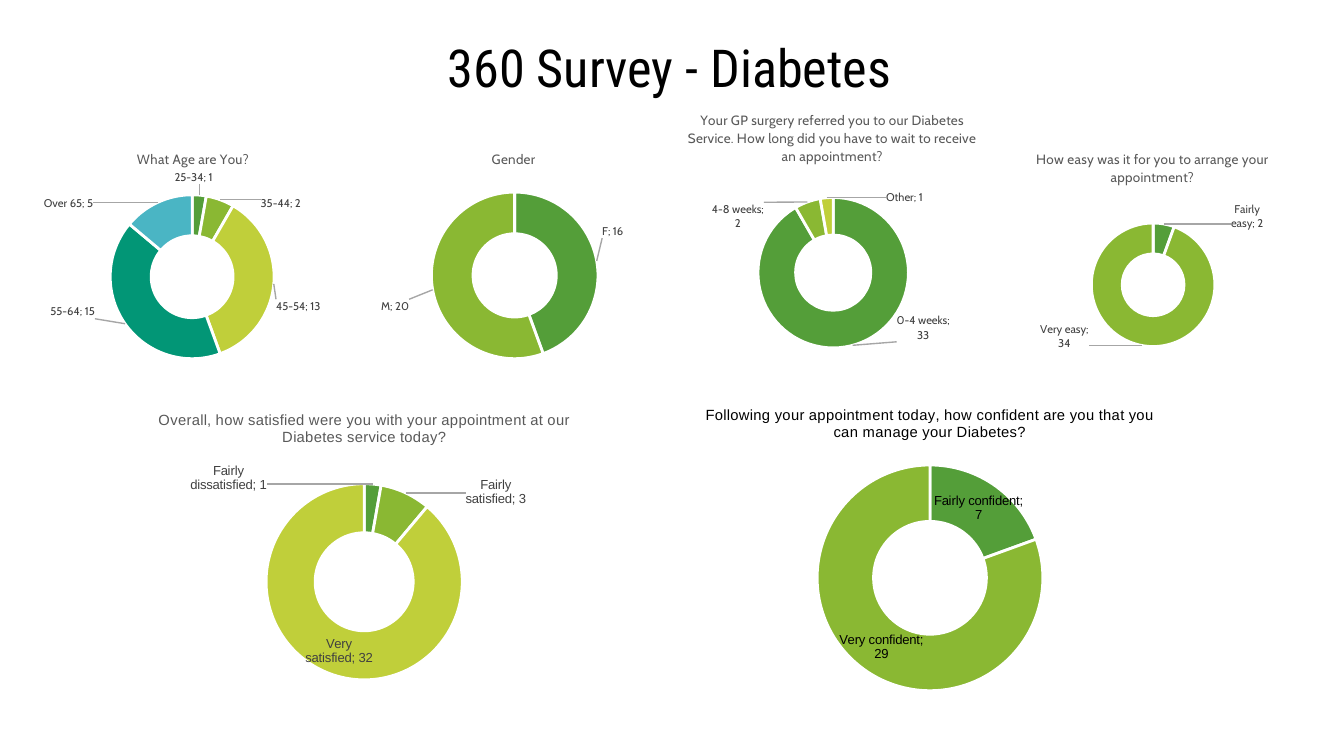
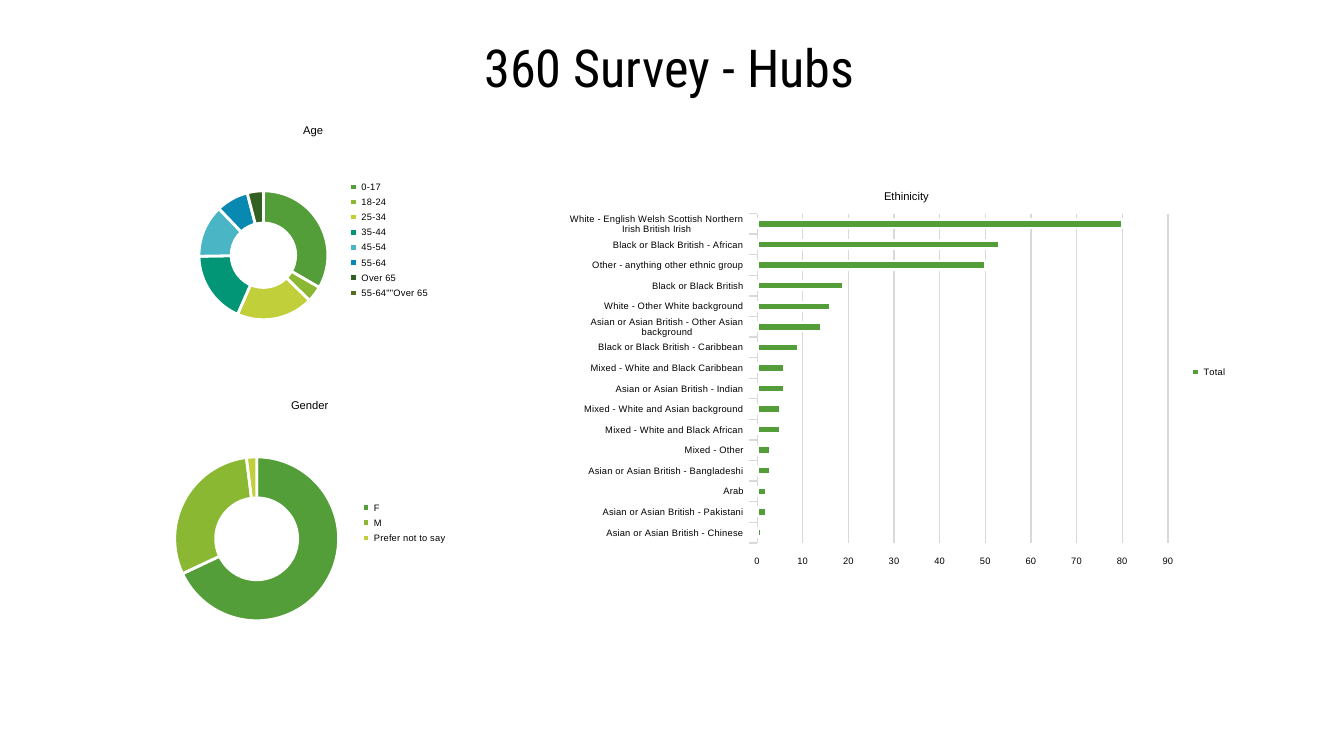
"""Builds two survey result slides with doughnut and bar charts."""
import math

import lxml.etree
import pptx
import pptx.chart.data
import pptx.dml.color
import pptx.enum.chart
import pptx.enum.text
import pptx.oxml
import pptx.oxml.ns
import pptx.util
from pptx.util import Inches, Pt

COLORS = {"black": "000000", "label": "404040", "heading": "595959",
          "grid": "D9D9D9", "leader": "A6A6A6", "white": "FFFFFF", "bar": "549E39"}
SEGMENTS = ["549E39", "8AB833", "C0CF3A", "029676", "4AB5C4", "0989B1", "325F22", "536E1F"]

CABIN = dict(font="Cabin", size=6, heading_size=7.2, heading_color="heading",
             label_color="label", hole=50, legend=False)
ARIAL = CABIN | dict(font="Arial", size=7, heading_size=7.9)
HUBS = dict(font="Arial", size=5, heading_size=6, heading_color="black",
            label_color=None, hole=75, legend=True)

DIABETES = [
    dict(CABIN, heading="What Age are You?", box=(0.02, 1, 2.83, 1.81),
         heading_at=(1, 1.09), ring=(1.43, 2.06, 0.61),
         data={"25-34": 1, "35-44": 2, "45-54": 13, "55-64": 15, "Over 65": 5},
         labels_at=[(1.44, 1.32), (2.09, 1.51), (2.22, 2.28), (0.54, 2.32), (0.51, 1.51)]),
    dict(CABIN, heading="Gender", box=(2.4, 1, 2.83, 1.81),
         heading_at=(3.64, 1.09), ring=(3.83, 2.05, 0.62),
         data={"F": 16, "M": 20}, labels_at=[(4.56, 1.72), (2.94, 2.28)]),
    dict(CABIN, heading="Your GP surgery referred you to our Diabetes Service. "
                        "How long did you have to wait to receive an appointment?",
         box=(4.78, 0.71, 2.83, 2.11), heading_at=(5.1, 0.8), ring=(6.2, 2.03, 0.56),
         data={"0-4 weeks": 33, "4-8 weeks": 2, "Other": 1},
         labels_at=[(6.87, 2.44), (5.49, 1.61), (6.73, 1.47)]),
    dict(CABIN, heading="How easy was it for you to arrange your appointment?",
         box=(7.17, 1, 2.83, 1.81), heading_at=(7.69, 1.09), ring=(8.58, 2.12, 0.46),
         data={"Fairly easy": 2, "Very easy": 34}, labels_at=[(9.28, 1.61), (7.92, 2.5)]),
    dict(ARIAL, heading="Overall, how satisfied were you with your appointment "
                        "at our Diabetes service today?",
         box=(0.58, 2.93, 4.27, 2.32), heading_at=(1.16, 3.03), ring=(2.71, 4.33, 0.73),
         data={"Fairly dissatisfied": 1, "Fairly satisfied": 3, "Very satisfied": 32},
         labels_at=[(1.7, 3.56), (3.69, 3.66)]),
    dict(ARIAL, heading="Following your appointment today, how confident are you "
                        "that you can manage your Diabetes?",
         heading_color="black", label_color="black",
         box=(4.78, 2.89, 4.27, 2.4), heading_at=(5.23, 2.99), ring=(6.92, 4.3, 0.84),
         data={"Fairly confident": 7, "Very confident": 29}, labels_at=[]),
]
HUB_RINGS = [
    dict(HUBS, heading="Age", box=(1.34, 0.8, 1.97, 1.97),
         heading_at=(2.24, 0.9), ring=(1.96, 1.9, 0.48),
         data={"0-17": 33, "18-24": 4, "25-34": 19, "35-44": 18, "45-54": 13,
               "55-64": 8, "Over 65": 4, '55-64""Over 65': 0}),
    dict(HUBS, heading="Gender", box=(1.17, 2.85, 2.27, 2.08),
         heading_at=(2.15, 2.95), ring=(1.91, 4.01, 0.61),
         data={"F": 68, "M": 30, "Prefer not to say": 2}),
]
ETHNICITY = dict(
    HUBS, heading="Ethinicity", box=(4.24, 1.27, 5, 3), heading_at=(6.56, 1.39),
    plot=(5.63, 1.59, 3.06, 2.45), series="Total",
    data={"Asian or Asian British - Chinese": 1,
          "Asian or Asian British - Pakistani": 2,
          "Arab": 2,
          "Asian or Asian British - Bangladeshi": 3,
          "Mixed - Other": 3,
          "Mixed - White and Black African": 5,
          "Mixed - White and Asian background": 5,
          "Asian or Asian British - Indian": 6,
          "Mixed - White and Black Caribbean": 6,
          "Black or Black British - Caribbean": 9,
          "Asian or Asian British - Other Asian background": 14,
          "White - Other White background": 16,
          "Black or Black British": 19,
          "Other - anything other ethnic group": 50,
          "Black or Black British - African": 53,
          "White - English Welsh Scottish Northern Irish British Irish": 80})


def rgb(value):
    return pptx.dml.color.RGBColor.from_string(COLORS.get(value, value))


def style_font(font, name, size, color):
    font.name, font.size, font.bold = name, Pt(size), False
    font.color.rgb = rgb(color)


def write_text(frame, text, *, font, size, color="black"):
    frame.text = text
    paragraph = frame.paragraphs[0]
    paragraph.alignment = pptx.enum.text.PP_ALIGN.CENTER
    style_font(paragraph.runs[0].font, font, size, color)


def outline(line, color, width):
    line.color.rgb = rgb(color)
    line.width = Pt(width)


def set_layout(parent, index, **parts):
    for old in parent.findall(pptx.oxml.ns.qn("c:layout")):
        parent.remove(old)
    settings = "".join(f'<c:{key} val="{value}"/>' for key, value in parts.items())
    parent.insert(index, pptx.oxml.parse_xml(
        f'<c:layout {pptx.oxml.ns.nsdecls("c")}><c:manualLayout>{settings}'
        '</c:manualLayout></c:layout>'))


def add_survey_chart(slide, kind, survey, plot):
    left, top, width, height = survey["box"]
    content = pptx.chart.data.CategoryChartData()
    content.categories = list(survey["data"])
    content.add_series(survey.get("series", "Series 1"), list(survey["data"].values()))
    chart = slide.shapes.add_chart(kind, *map(Inches, survey["box"]), content).chart
    style_font(chart.font, survey["font"], survey["size"], "black")

    write_text(chart.chart_title.text_frame, survey["heading"], font=survey["font"],
               size=survey["heading_size"], color=survey["heading_color"])
    x, y = survey["heading_at"]
    set_layout(chart.element.xpath(".//c:chart/c:title")[0], 1, xMode="edge", yMode="edge",
               x=(x - left) / width, y=(y - top) / height)

    x, y, w, h = plot
    set_layout(chart.element.xpath(".//c:plotArea")[0], 0, layoutTarget="inner",
               xMode="edge", yMode="edge", x=(x - left) / width, y=(y - top) / height,
               w=w / width, h=h / height)

    chart.has_legend = survey["legend"]
    if survey["legend"]:
        chart.legend.position = pptx.enum.chart.XL_LEGEND_POSITION.RIGHT
        chart.legend.include_in_layout = False
        style_font(chart.legend.font, survey["font"], survey["size"], "black")
    return chart


def label_segments(chart, survey):
    series = chart.plots[0].series[0]
    labels = series.data_labels
    labels.show_value = labels.show_category_name = True
    label_style = survey["font"], survey["size"], survey["label_color"]
    style_font(labels.font, *label_style)

    _, _, width, height = survey["box"]
    cx, cy, radius = survey["ring"]
    values = list(survey["data"].values())
    for index, (x, y) in enumerate(survey["labels_at"]):
        style_font(series.points[index].data_label.font, *label_style)
        label = chart.element.xpath(f".//c:dLbl[c:idx/@val='{index}']")[0]
        label.xpath("c:showCatName")[0].set("val", "1")
        angle = math.tau * (sum(values[:index]) + values[index] / 2) / sum(values)
        home_x = cx + 0.75 * radius * math.sin(angle)
        home_y = cy - 0.75 * radius * math.cos(angle)
        set_layout(label, 1, x=(x - home_x) / width, y=(y - home_y) / height)

    for last_flag in chart.element.xpath(".//c:ser//c:showBubbleSize"):
        separator = lxml.etree.Element(pptx.oxml.ns.qn("c:separator"))
        separator.text = "; "
        last_flag.addnext(separator)
    for flag in chart.element.xpath(".//c:ser//c:showLeaderLines"):
        flag.set("val", "1")
        flag.addnext(pptx.oxml.parse_xml(
            f'<c:leaderLines {pptx.oxml.ns.nsdecls("c", "a")}><c:spPr><a:ln w="9525">'
            f'<a:solidFill><a:srgbClr val="{COLORS["leader"]}"/></a:solidFill>'
            '</a:ln></c:spPr></c:leaderLines>'))


def add_ring(slide, survey):
    cx, cy, radius = survey["ring"]
    chart = add_survey_chart(slide, pptx.enum.chart.XL_CHART_TYPE.DOUGHNUT, survey,
                             (cx - radius, cy - radius, 2 * radius, 2 * radius))
    chart.element.xpath(".//c:holeSize")[0].set("val", str(survey["hole"]))
    series = chart.plots[0].series[0]
    for index, color in enumerate(SEGMENTS[:len(survey["data"])]):
        segment = series.points[index].format
        segment.fill.solid()
        segment.fill.fore_color.rgb = rgb(color)
        outline(segment.line, "white", 1.5)
    if survey["label_color"]:
        label_segments(chart, survey)


def add_bars(slide, survey):
    chart = add_survey_chart(slide, pptx.enum.chart.XL_CHART_TYPE.BAR_CLUSTERED,
                             survey, survey["plot"])
    bars = chart.plots[0]
    bars.gap_width, bars.vary_by_categories = 150, False
    series = bars.series[0]
    series.format.fill.solid()
    series.format.fill.fore_color.rgb = rgb("bar")
    outline(series.format.line, "white", 1.5)

    groups, counts = chart.category_axis, chart.value_axis
    for axis in (groups, counts):
        axis.major_tick_mark = pptx.enum.chart.XL_TICK_MARK.OUTSIDE
        axis.minor_tick_mark = pptx.enum.chart.XL_TICK_MARK.NONE
        style_font(axis.tick_labels.font, survey["font"], survey["size"], "black")
    outline(groups.format.line, "grid", 0.75)
    counts.format.line.fill.background()
    counts.minimum_scale, counts.maximum_scale, counts.major_unit = 0, 90, 10
    counts.has_major_gridlines = True
    outline(counts.major_gridlines.format.line, "grid", 0.75)


def add_survey_slide(deck, heading):
    slide = deck.slides.add_slide(deck.slide_layouts[5])
    title = slide.shapes.title
    title.left, title.top, title.width, title.height = map(Inches, (0.32, 0.18, 9.32, 0.63))
    frame = title.text_frame
    frame.vertical_anchor = pptx.enum.text.MSO_ANCHOR.MIDDLE
    frame.margin_left = frame.margin_right = Inches(0.1)
    frame.margin_top = frame.margin_bottom = Inches(0.1)
    write_text(frame, heading, font="Roboto Condensed", size=28)
    return slide


def main():
    deck = pptx.Presentation()
    deck.slide_width = Inches(10)
    deck.slide_height = deck.slide_width * 9 // 16
    diabetes = add_survey_slide(deck, "360 Survey - Diabetes")
    for survey in DIABETES:
        add_ring(diabetes, survey)
    hubs = add_survey_slide(deck, "360 Survey - Hubs")
    for survey in HUB_RINGS:
        add_ring(hubs, survey)
    add_bars(hubs, ETHNICITY)
    deck.save("out.pptx")


if __name__ == "__main__":
    main()
